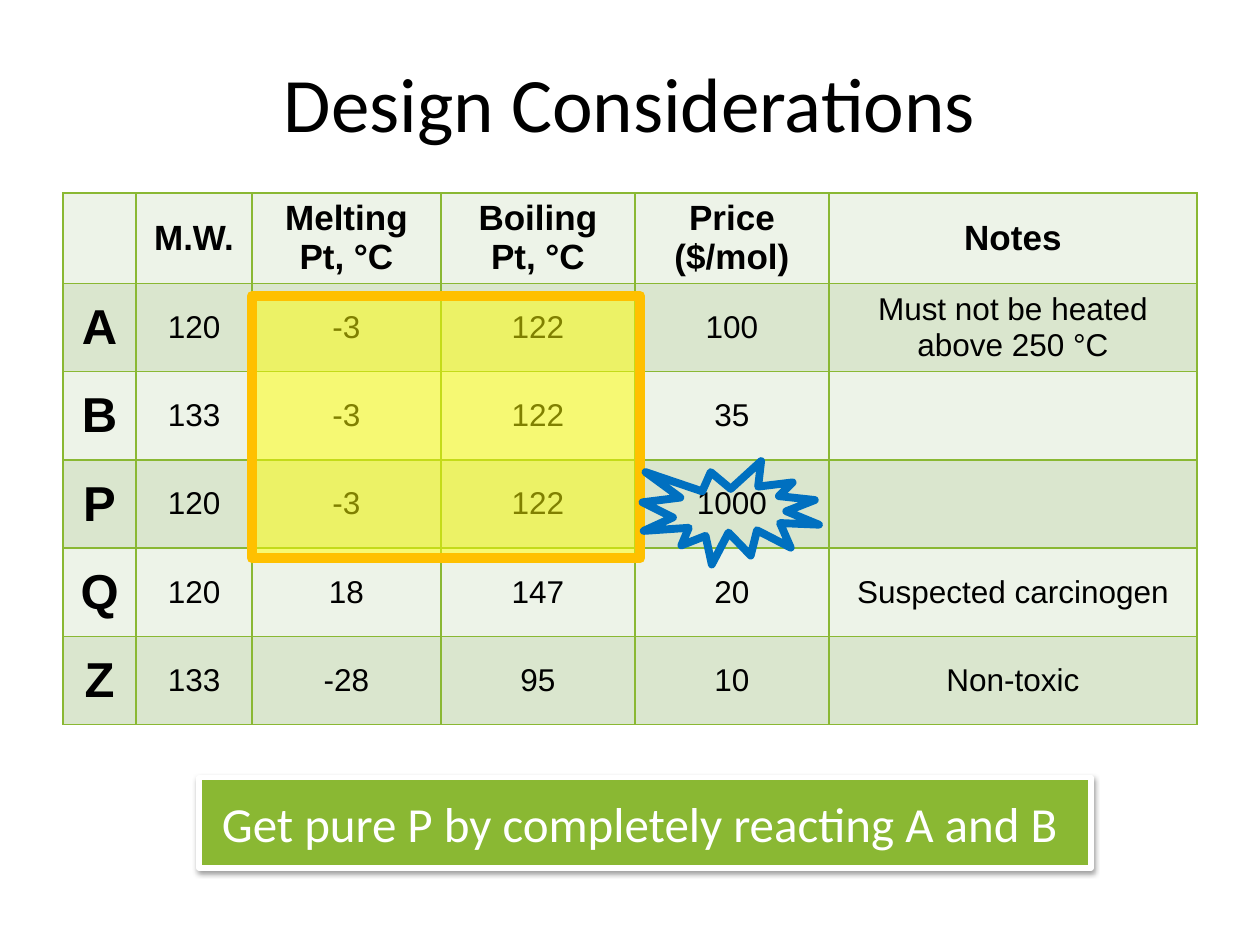
from lxml import etree
from pptx import Presentation
from pptx import util as u
from pptx.dml.color import RGBColor
from pptx.enum import shapes, text
from pptx.oxml.ns import qn


def rgb(value):
    return RGBColor.from_string(value)


def add_xml(parent, tag, **attrs):
    return etree.SubElement(parent, qn(tag), attrs)


class Deck:
    GREEN = "8AB833"
    BANDS = ("EDF3E8", "DAE6CE")
    TITLE = {"name": "Calibri", "size": u.Pt(44)}
    BANNER = {"name": "Calibri", "size": u.Pt(28)}
    HEADER = {"name": "Arial", "size": u.Pt(20), "bold": True}
    LABEL = {"name": "Arial", "size": u.Pt(28), "bold": True}
    BODY = {"name": "Arial", "size": u.Pt(18), "bold": False}

    def __init__(self, width, height):
        self.prs = Presentation()
        self.prs.slide_width = u.Inches(width)
        self.prs.slide_height = u.Inches(height)
        self.s = self.prs.slides.add_slide(self.prs.slide_layouts[6])

    def put_text(self, tf, content, style, color="000000"):
        p = tf.paragraphs[0]
        p.alignment = text.PP_ALIGN.CENTER
        r = p.add_run()
        r.text = content
        for key, value in style.items():
            setattr(r.font, key, value)
        r.font.color.rgb = rgb(color)

    def textbox(self, box, content, style):
        tf = self.s.shapes.add_textbox(*map(u.Inches, box)).text_frame
        tf.word_wrap = True
        tf.vertical_anchor = text.MSO_ANCHOR.MIDDLE
        self.put_text(tf, content, style)

    def shape(self, kind, box, line, width, fill=None, alpha=None):
        sp = self.s.shapes.add_shape(kind, *map(u.Inches, box))
        sp.shadow.inherit = False
        if fill:
            sp.fill.solid()
            sp.fill.fore_color.rgb = rgb(fill)
        else:
            sp.fill.background()
        if alpha:
            clr = sp._element.spPr.find(qn("a:solidFill"))[0]
            add_xml(clr, "a:alpha", val=str(alpha * 1000))
        sp.line.color.rgb = rgb(line)
        sp.line.width = u.Pt(width)
        add_xml(sp._element.spPr.find(qn("a:ln")), "a:round")
        return sp

    def banner(self, box, content):
        sp = self.shape(shapes.MSO_SHAPE.RECTANGLE, box, "FFFFFF", 3, self.GREEN)
        effects = sp._element.spPr.find(qn("a:effectLst"))
        shadow = add_xml(effects, "a:outerShdw", blurRad=str(u.Pt(3.1)),
                         dist=str(u.Pt(1.6)), dir="5400000", rotWithShape="0")
        clr = add_xml(shadow, "a:srgbClr", val="000000")
        add_xml(clr, "a:alpha", val="38000")
        sp.text_frame.vertical_anchor = text.MSO_ANCHOR.MIDDLE
        self.put_text(sp.text_frame, content, self.BANNER, "FFFFFF")

    def borders(self, cell):
        tc_pr = cell._tc.get_or_add_tcPr()
        for side in "LRTB":
            ln = add_xml(tc_pr, f"a:ln{side}", w=str(u.Pt(1)))
            add_xml(add_xml(ln, "a:solidFill"), "a:srgbClr", val=self.GREEN)

    def table(self, left, top, widths, row_height, rows):
        frame = self.s.shapes.add_table(
            len(rows), len(widths), u.Inches(left), u.Inches(top),
            u.Inches(sum(widths)), u.Inches(row_height * len(rows)))
        tbl = frame.table
        tbl.first_row = tbl.horz_banding = False
        for col, width in zip(tbl.columns, widths):
            col.width = u.Inches(width)
        for i, row in enumerate(rows):
            tbl.rows[i].height = u.Inches(row_height)
            for j, content in enumerate(row):
                cell = tbl.cell(i, j)
                self.borders(cell)
                cell.fill.solid()
                cell.fill.fore_color.rgb = rgb(self.BANDS[i % 2])
                cell.vertical_anchor = text.MSO_ANCHOR.MIDDLE
                if content:
                    style = self.HEADER if i == 0 else self.LABEL if j == 0 else self.BODY
                    self.put_text(cell.text_frame, content, style)


def main():
    rows = [
        ("", "M.W.", "Melting Pt, °C", "Boiling Pt, °C", "Price ($/mol)", "Notes"),
        ("A", "120", "-3", "122", "100", "Must not be heated above 250 °C"),
        ("B", "133", "-3", "122", "35", ""),
        ("P", "120", "-3", "122", "1000", ""),
        ("Q", "120", "18", "147", "20", "Suspected carcinogen"),
        ("Z", "133", "-28", "95", "10", "Non-toxic"),
    ]
    deck = Deck(10, 7.5)
    deck.table(0.5, 1.53, (0.58, 0.92, 1.5, 1.54, 1.54, 2.92), 0.7, rows)
    deck.shape(shapes.MSO_SHAPE.RECTANGLE, (2, 2.35, 3.08, 2.08),
               "FFC000", 6, "FFFF00", 50)
    deck.banner((1.58, 6.17, 7.08, 0.72), "Get pure P by completely reacting A and B ")
    deck.shape(shapes.MSO_SHAPE.EXPLOSION1, (5.1, 3.66, 1.4, 0.82), "0070C0", 4.5)
    deck.textbox((0.5, 0.18, 9, 1.25), "Design Considerations", deck.TITLE)
    deck.prs.save("out.pptx")


if __name__ == "__main__":
    main()
